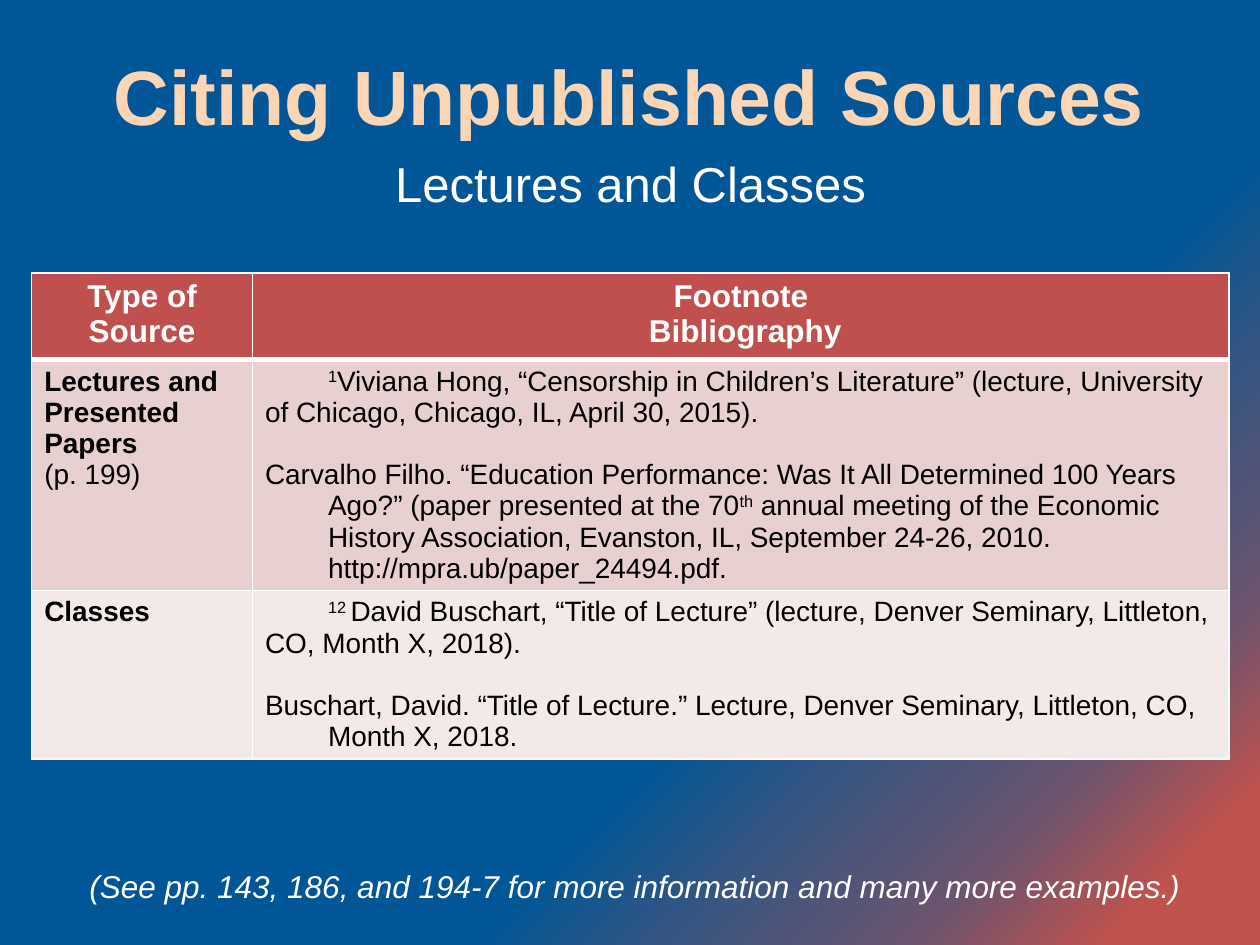
from dataclasses import dataclass

from lxml.etree import SubElement
from pptx import Presentation
from pptx.dml.color import RGBColor
from pptx.enum.text import MSO_ANCHOR, MSO_AUTO_SIZE, PP_ALIGN
from pptx.oxml.ns import qn
from pptx.util import Cm, Pt

FONT = "Arial"
WHITE, BLACK, PEACH = "FFFFFF", "000000", "FCD5B5"
BLUE, RED = "005696", "C0504D"
PINK, PALE_PINK = "E8D0D0", "F4E9E9"
BACKGROUND_STOPS = [(8, BLUE), (64, BLUE), (73, "375581"), (84, "6B546E"), (93, "C0524E")]
HANGING = Cm(1.27)


@dataclass(frozen=True)
class Span:
    text: str
    bold: bool = False
    italic: bool = False
    raised: bool = False


@dataclass(frozen=True)
class Line:
    spans: tuple[Span, ...]
    size: float = 16
    color: str = BLACK
    align: PP_ALIGN = PP_ALIGN.LEFT
    left: int = 0
    indent: int = 0
    before: float = 0


@dataclass(frozen=True)
class SourceRow:
    height: float
    fill: str
    cells: tuple[tuple[Line, ...], tuple[Line, ...]]
    top_border: float = 1
    bottom_border: float = 1


def rgb(value: str) -> RGBColor:
    return RGBColor.from_string(value)


def centred(text: str, size: float, color: str = WHITE, bold: bool = False,
            italic: bool = False, before: float = 0) -> Line:
    return Line((Span(text, bold, italic),), size, color, PP_ALIGN.CENTER, before=before)


def footnote(*spans: Span) -> Line:
    """First line indented."""
    return Line(spans, indent=HANGING)


def bibliography(*spans: Span) -> Line:
    """Hanging indent, one line below the footnote."""
    return Line(spans, left=HANGING, indent=-HANGING, before=18)


def write(frame, lines: tuple[Line, ...]) -> None:
    for index, line in enumerate(lines):
        paragraph = frame.add_paragraph() if index else frame.paragraphs[0]
        paragraph.alignment = line.align
        paragraph.space_before = Pt(line.before)
        properties = paragraph._p.get_or_add_pPr()
        properties.set("marL", str(line.left))
        properties.set("indent", str(line.indent))
        SubElement(properties, qn("a:buNone"))
        for span in line.spans:
            run = paragraph.add_run()
            run.text = span.text
            font = run.font
            font.name, font.size = FONT, Pt(line.size)
            font.bold, font.italic = span.bold, span.italic
            font.color.rgb = rgb(line.color)
            if span.raised:
                run._r.get_or_add_rPr().set("baseline", "30000")


def place(shape, left: float, top: float, width: float, height: float) -> None:
    shape.left, shape.top, shape.width, shape.height = map(Cm, (left, top, width, height))


def paint_background(slide) -> None:
    fill = slide.background.fill
    fill.gradient()
    gradient = slide._element.find(".//" + qn("a:gradFill"))
    stops = gradient.find(qn("a:gsLst"))
    for stop in list(stops):
        stops.remove(stop)
    for position, color in BACKGROUND_STOPS:
        stop = SubElement(stops, qn("a:gs"), pos=str(position * 1000))
        SubElement(stop, qn("a:srgbClr"), val=color)
    gradient.find(qn("a:lin")).set("ang", str(45 * 60000))


def add_borders(cell, top: float, bottom: float) -> None:
    properties = cell._tc.get_or_add_tcPr()
    for side, width in (("L", 1), ("R", 1), ("T", top), ("B", bottom)):
        border = SubElement(properties, qn(f"a:ln{side}"), w=str(Pt(width)))
        SubElement(SubElement(border, qn("a:solidFill")), qn("a:srgbClr"), val=WHITE)


def add_source_table(slide, rows: tuple[SourceRow, ...]) -> None:
    height = sum(row.height for row in rows)
    table = slide.shapes.add_table(
        len(rows), 2, Cm(0.64), Cm(5.5), Cm(24.14), Cm(height)).table
    for column, width in zip(table.columns, (4.45, 19.69)):
        column.width = Cm(width)
    for row, source in zip(table.rows, rows):
        row.height = Cm(source.height)
        for cell, lines in zip(row.cells, source.cells):
            add_borders(cell, source.top_border, source.bottom_border)
            cell.fill.solid()
            cell.fill.fore_color.rgb = rgb(source.fill)
            write(cell.text_frame, lines)


SOURCE_ROWS = (
    SourceRow(1.75, RED, (
        (centred("Type of Source", 18, bold=True),),
        (centred("Footnote", 18, bold=True), centred(" Bibliography", 18, bold=True)),
    ), bottom_border=3),
    SourceRow(4.65, PINK, (
        (Line((Span("Lectures and Presented Papers", bold=True),)),
         Line((Span("(p. 199)"),))),
        (footnote(
            Span("1", raised=True),
            Span("Viviana Hong, “Censorship in Children’s Literature” (lecture, "
                 "University of Chicago, Chicago, IL, April 30, 2015).")),
         bibliography(
            Span("Carvalho Filho. “Education Performance: Was It All Determined 100 "
                 "Years Ago?” (paper presented at the 70"),
            Span("th", raised=True),
            Span(" annual meeting of the Economic History Association, Evanston, IL, "
                 "September 24-26, 2010. http://mpra.ub/paper_24494.pdf."))),
    ), top_border=3),
    SourceRow(3.4, PALE_PINK, (
        (Line((Span("Classes", bold=True),)),),
        (footnote(
            Span("12 ", raised=True),
            Span("David Buschart, “Title of Lecture” (lecture, Denver Seminary, "
                 "Littleton, CO, Month X, 2018).")),
         bibliography(
            Span("Buschart, David. “Title of Lecture.” Lecture, Denver Seminary, "
                 "Littleton, CO, Month X, 2018."))),
    )),
)


def main() -> None:
    deck = Presentation()
    deck.slide_width, deck.slide_height = Cm(25.4), Cm(19.05)
    slide = deck.slides.add_slide(deck.slide_layouts[1])
    paint_background(slide)

    title, subtitle = slide.placeholders
    place(title, 0, 0.2, 25.4, 3.18)
    title.text_frame.vertical_anchor = MSO_ANCHOR.MIDDLE
    title.text_frame.margin_top = Cm(0.38)
    write(title.text_frame, (centred("Citing Unpublished Sources", 44, PEACH, bold=True),))

    place(subtitle, 2.97, 2.97, 19.48, 1.7)
    write(subtitle.text_frame, (centred("Lectures and Classes", 28, before=3),))

    add_source_table(slide, SOURCE_ROWS)

    page_note = slide.shapes.add_textbox(Cm(1.47), Cm(17.35), Cm(22.66), Cm(1.02))
    page_note.text_frame.word_wrap = False
    page_note.text_frame.auto_size = MSO_AUTO_SIZE.SHAPE_TO_FIT_TEXT
    write(page_note.text_frame, (centred(
        "(See pp. 143, 186, and 194-7 for more information and many more examples.)",
        18, italic=True),))

    deck.save("out.pptx")


if __name__ == "__main__":
    main()
